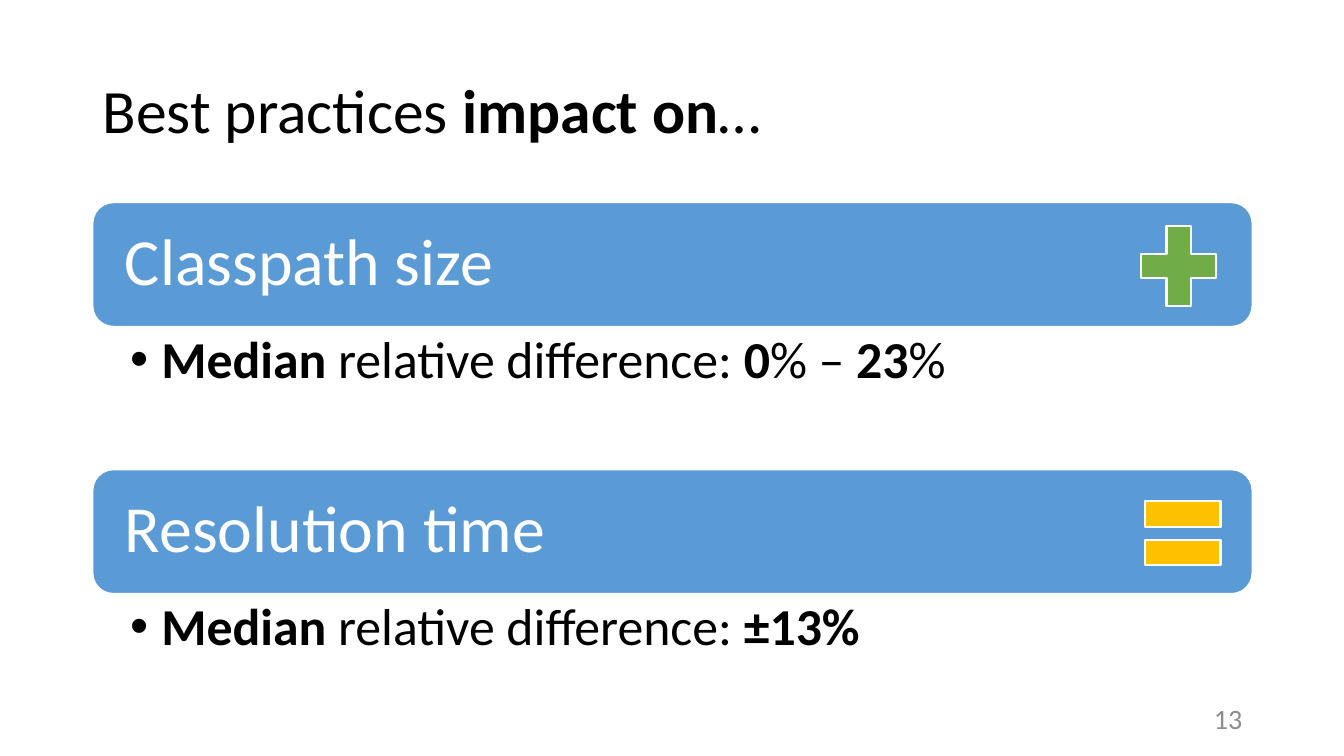
from dataclasses import dataclass

import pptx
import pptx.dml.color
import pptx.enum.shapes
import pptx.enum.text
import pptx.oxml
import pptx.oxml.ns
import pptx.util
from pptx.util import Inches

MSO_SHAPE = pptx.enum.shapes.MSO_SHAPE
MSO_ANCHOR = pptx.enum.text.MSO_ANCHOR
PP_ALIGN = pptx.enum.text.PP_ALIGN

FONT = "Calibri"
LEFT, WIDTH = 0.92, 11.5
BAR_HEIGHT = 1.23

Runs = list[tuple[str, bool]]


@dataclass
class Section:
    heading: str
    finding: Runs
    top: float
    list_height: float
    symbol: MSO_SHAPE
    symbol_left: float
    symbol_color: str


SECTIONS = [
    Section("Classpath size",
            [("Median", True), (" relative difference: ", False), ("0", True),
             ("% – ", False), ("23", True), ("%", False)],
            2.01, 1.41, MSO_SHAPE.MATH_PLUS, 11.18, "70AD47"),
    Section("Resolution time",
            [("Median ", True), ("relative difference: ", False), ("±13%", True)],
            4.66, 0.85, MSO_SHAPE.MATH_EQUAL, 11.22, "FFC000"),
]


def rgb(color: str) -> pptx.dml.color.RGBColor:
    return pptx.dml.color.RGBColor.from_string(color)


def place(sp, left: float, top: float, width: float, height: float) -> None:
    sp.left, sp.top = Inches(left), Inches(top)
    sp.width, sp.height = Inches(width), Inches(height)


def write(sp, runs: Runs, size: float, color: str, align=PP_ALIGN.LEFT,
          anchor=MSO_ANCHOR.MIDDLE, inset: tuple[float, float] = (0.1, 0.05)):
    """Fill a shape with one formatted paragraph and return it."""
    tf = sp.text_frame
    tf.word_wrap = True
    tf.auto_size = pptx.enum.text.MSO_AUTO_SIZE.NONE
    tf.vertical_anchor = anchor
    tf.margin_left = tf.margin_right = Inches(inset[0])
    tf.margin_top = tf.margin_bottom = Inches(inset[1])
    p = tf.paragraphs[0]
    p.alignment = align
    p.line_spacing = 0.9
    p.space_before = pptx.util.Pt(0)
    for text, bold in runs:
        r = p.add_run()
        r.text = text
        r.font.name = FONT
        r.font.size = pptx.util.Pt(size)
        r.font.bold = bold
        r.font.color.rgb = rgb(color)
    return p


def add_bullet(p, indent: float) -> None:
    pPr = p._p.get_or_add_pPr()
    pPr.set("marL", str(Inches(indent)))
    pPr.set("indent", str(-Inches(indent)))
    bullet = pptx.oxml.parse_xml(
        f'<a:buChar {pptx.oxml.ns.nsdecls("a")} char="•"/>')
    pPr.append(bullet)


def add_filled_shape(s, kind: MSO_SHAPE, left: float, top: float, width: float,
                     height: float, fill: str, line_width: float):
    sp = s.shapes.add_shape(kind, Inches(left), Inches(top),
                            Inches(width), Inches(height))
    sp.shadow.inherit = False
    sp.fill.solid()
    sp.fill.fore_color.rgb = rgb(fill)
    sp.line.color.rgb = rgb("FFFFFF")
    sp.line.width = pptx.util.Pt(line_width)
    return sp


def add_section(s, section: Section, body) -> None:
    # Heading bar
    bar = add_filled_shape(s, MSO_SHAPE.ROUNDED_RECTANGLE, LEFT, section.top,
                           WIDTH, BAR_HEIGHT, "5B9BD5", 1)
    write(bar, [(section.heading, False)], 47, "FFFFFF", inset=(0.26, 0.2))

    # Finding below the bar
    place(body, LEFT, section.top + BAR_HEIGHT, WIDTH, section.list_height)
    p = write(body, section.finding, 37, "000000",
              anchor=MSO_ANCHOR.TOP, inset=(0.37, 0.07))
    add_bullet(p, 0.31)

    # Verdict symbol
    add_filled_shape(s, section.symbol, section.symbol_left, section.top + 0.09,
                     1.02, 1.08, section.symbol_color, 1.5)


def main() -> None:
    prs = pptx.Presentation()
    prs.slide_width, prs.slide_height = Inches(13.33), Inches(7.5)
    s = prs.slides.add_slide(prs.slide_layouts.get_by_name("Two Content"))

    # Title
    title, *bodies = s.placeholders
    place(title, LEFT, 0.4, WIDTH, 1.45)
    write(title, [("Best practices ", False), ("impact on", True), ("…", False)],
          44, "000000")

    # Sections
    for section, body in zip(SECTIONS, bodies):
        add_section(s, section, body)

    # Slide number
    number = s.shapes.add_textbox(Inches(9.42), Inches(6.95), Inches(3), Inches(0.4))
    write(number, [("13", False)], 20, "8C8C8C", align=PP_ALIGN.RIGHT)

    prs.save("out.pptx")


if __name__ == "__main__":
    main()
